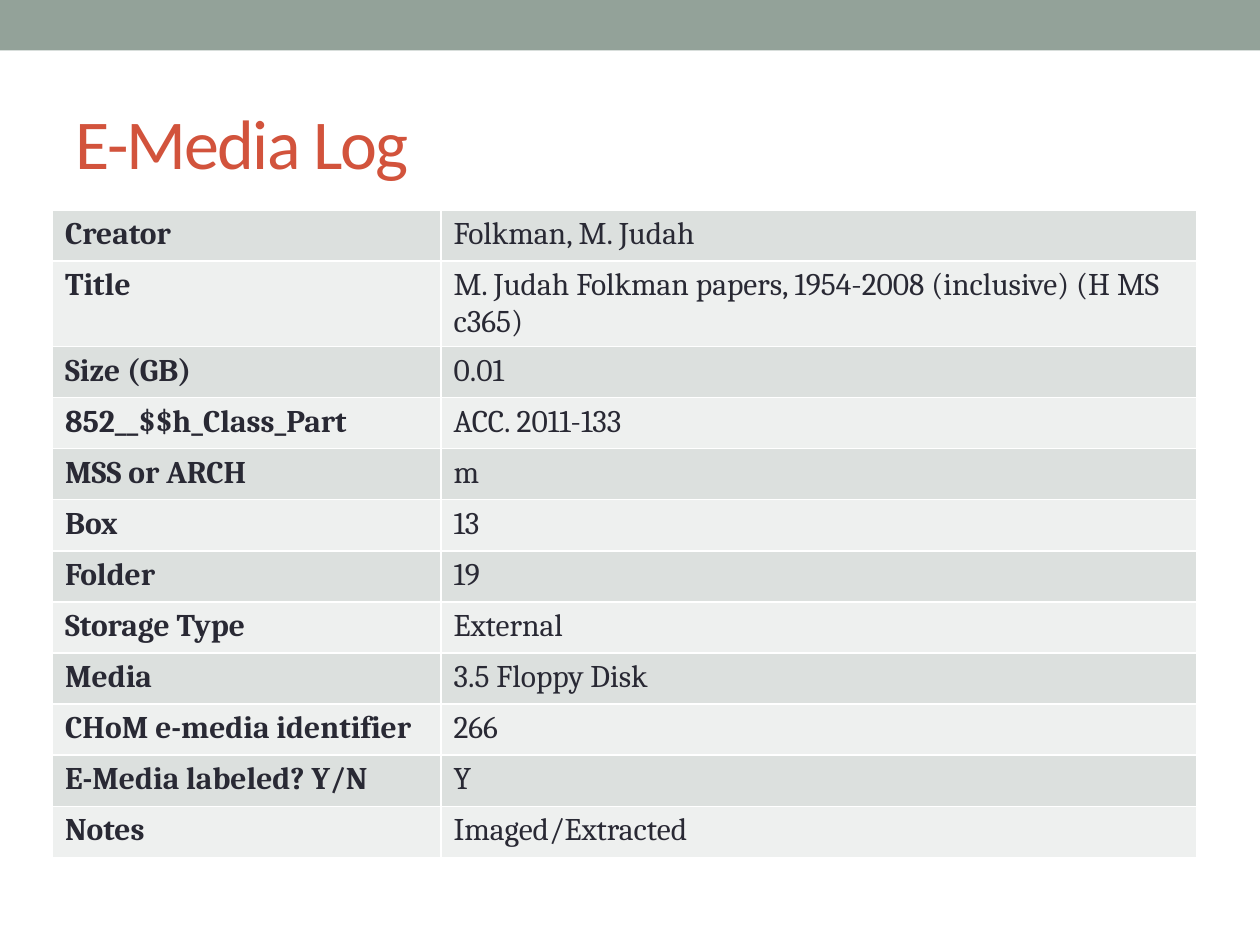
import lxml.etree
import pptx
import pptx.dml.color
import pptx.enum.shapes
import pptx.enum.text
import pptx.oxml.ns
import pptx.util

Pt = pptx.util.Pt

LOG_ENTRIES = [
    ("Creator", "Folkman, M. Judah"),
    ("Title", "M. Judah Folkman papers, 1954-2008 (inclusive) (H MS c365)"),
    ("Size (GB)", "0.01"),
    ("852__$$h_Class_Part", "ACC. 2011-133"),
    ("MSS or ARCH", "m"),
    ("Box", "13"),
    ("Folder", "19"),
    ("Storage Type", "External"),
    ("Media", "3.5 Floppy Disk"),
    ("CHoM e-media identifier", "266"),
    ("E-Media labeled? Y/N", "Y"),
    ("Notes", "Imaged/Extracted"),
]


def color(value):
    return pptx.dml.color.RGBColor.from_string(value)


class SlideBuilder:
    """Holds the style and the current slide, and adds elements to it."""

    title_font = "Calibri"
    body_font = "Cambria"
    band_color = "93A299"
    title_color = "D2533C"
    text_color = "292934"
    border_color = "FFFFFF"
    row_colors = ("DCE0DE", "EEF0EF")

    def __init__(self, presentation):
        self.slide = presentation.slides.add_slide(presentation.slide_layouts[5])

    def format_font(self, paragraph, name, size, font_color, bold=False):
        font = paragraph.font
        font.name = name
        font.size = Pt(size)
        font.bold = bold
        font.color.rgb = color(font_color)

    def add_band(self, left, top, width, height):
        band = self.slide.shapes.add_shape(
            pptx.enum.shapes.MSO_SHAPE.RECTANGLE, Pt(left), Pt(top), Pt(width), Pt(height))
        band.shadow.inherit = False
        band.fill.solid()
        band.fill.fore_color.rgb = color(self.band_color)
        band.line.fill.background()

    def set_title(self, text, left, top, width, height):
        title = self.slide.shapes.title
        title.left, title.top = Pt(left), Pt(top)
        title.width, title.height = Pt(width), Pt(height)
        frame = title.text_frame
        frame.text = text
        frame.word_wrap = True
        frame.vertical_anchor = pptx.enum.text.MSO_ANCHOR.MIDDLE
        paragraph = frame.paragraphs[0]
        paragraph.alignment = pptx.enum.text.PP_ALIGN.LEFT
        self.format_font(paragraph, self.title_font, 40, self.title_color)
        paragraph.runs[0].font._element.set("spc", "-100")

    def add_borders(self, cell):
        properties = cell._tc.get_or_add_tcPr()
        qn = pptx.oxml.ns.qn
        for side in ("a:lnL", "a:lnR", "a:lnT", "a:lnB"):
            line = lxml.etree.SubElement(properties, qn(side), w=str(Pt(1)))
            fill = lxml.etree.SubElement(line, qn("a:solidFill"))
            lxml.etree.SubElement(fill, qn("a:srgbClr"), val=self.border_color)

    def format_cell(self, cell, text, fill_color, bold):
        self.add_borders(cell)
        cell.fill.solid()
        cell.fill.fore_color.rgb = color(fill_color)
        cell.text = text
        self.format_font(cell.text_frame.paragraphs[0], self.body_font, 18,
                         self.text_color, bold)

    def add_table(self, entries, left, top, column_widths, row_height):
        table = self.slide.shapes.add_table(
            len(entries), len(column_widths), Pt(left), Pt(top),
            Pt(sum(column_widths)), Pt(row_height * len(entries))).table
        table.first_row = False
        table.horz_banding = False
        for column, width in zip(table.columns, column_widths):
            column.width = Pt(width)
        for row_index, entry in enumerate(entries):
            table.rows[row_index].height = Pt(row_height)
            fill_color = self.row_colors[row_index % 2]
            for column_index, text in enumerate(entry):
                self.format_cell(table.cell(row_index, column_index), text,
                                 fill_color, bold=column_index == 0)


def main():
    presentation = pptx.Presentation()
    presentation.slide_width = Pt(720)
    presentation.slide_height = Pt(540)
    builder = SlideBuilder(presentation)
    builder.add_band(0, 0, 720, 28.8)
    builder.set_title("E-Media Log", 36, 42, 648, 78)
    builder.add_table(LOG_ENTRIES, 30, 120, (222, 432), 29.2)
    presentation.save("out.pptx")


if __name__ == "__main__":
    main()
